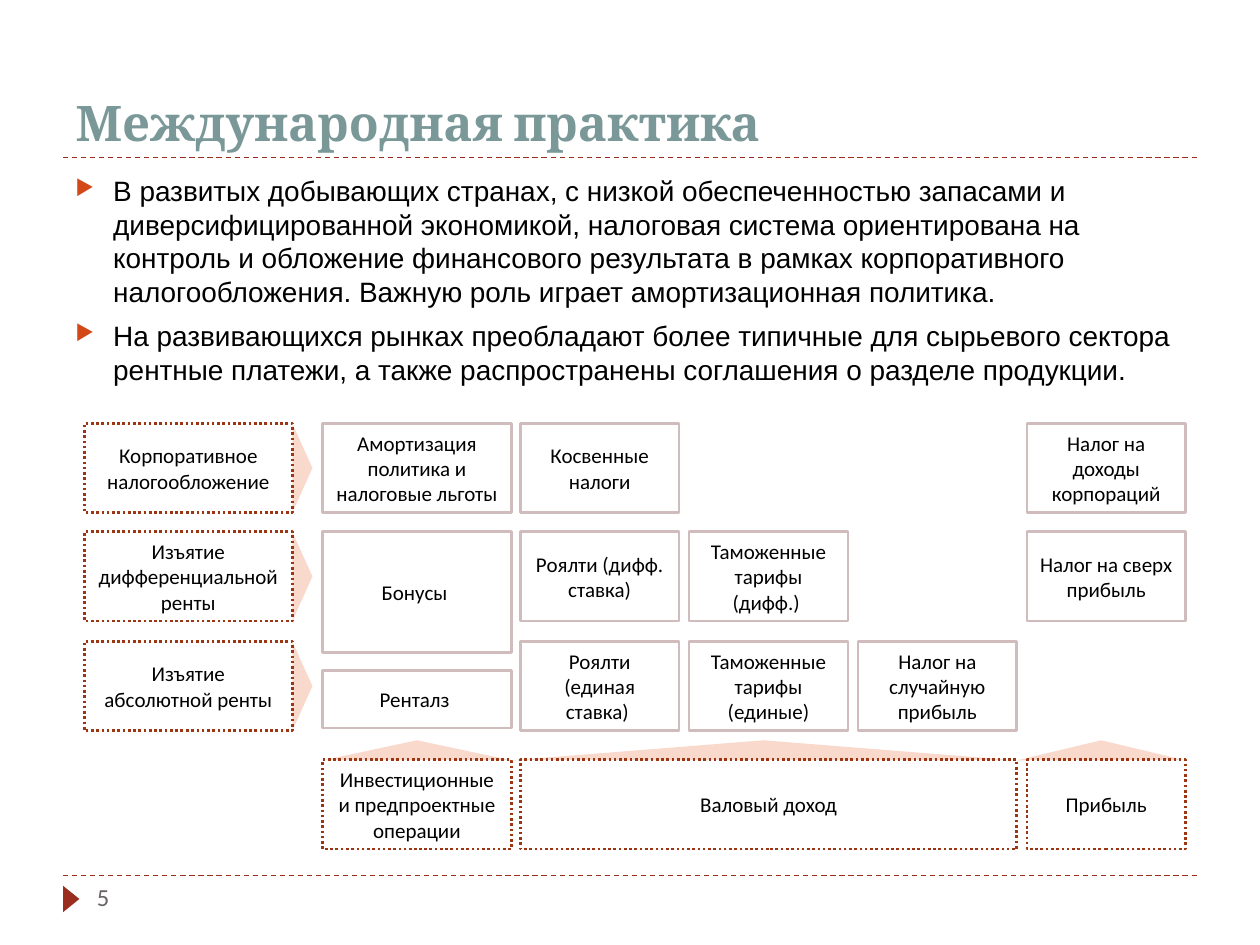
from dataclasses import dataclass

from lxml import etree
from pptx import Presentation
from pptx.dml.color import RGBColor
from pptx.enum.dml import MSO_LINE
from pptx.enum.shapes import MSO_CONNECTOR, MSO_SHAPE
from pptx.enum.text import MSO_ANCHOR, MSO_AUTO_SIZE, PP_ALIGN
from pptx.oxml.ns import qn
from pptx.util import Emu, Pt

RECTANGLE, ARROW = MSO_SHAPE.RECTANGLE, MSO_SHAPE.RIGHT_ARROW
TRIANGLE = MSO_SHAPE.ISOSCELES_TRIANGLE
STRAIGHT = MSO_CONNECTOR.STRAIGHT
DASH, DOTS = MSO_LINE.DASH, MSO_LINE.ROUND_DOT
LEFT, CENTER = PP_ALIGN.LEFT, PP_ALIGN.CENTER
TOP, MIDDLE, BOTTOM = MSO_ANCHOR.TOP, MSO_ANCHOR.MIDDLE, MSO_ANCHOR.BOTTOM

SCALE = 9144  # EMU in one px, 100 px to the inch
COLORS = {
    "title": "7B9899", "rule": "9B2D1F", "bullet": "D34817", "text": "000000",
    "number": "696464", "arrow": "FAD9CD", "heading": "9C3511",
    "tax": "D0BCBC", "white": "FFFFFF",
}

# Grid of the diagram
COLUMNS = [256, 413, 547, 681, 815]
ROWS = [336, 422, 509]
HEADING_LEFT, HEADING_WIDTH = 67, 165
BASE_TOP = 603
FIRST_WIDTH, WIDTH, HEIGHT = 150, 126, 71
ARROW_DEPTH = 16


@dataclass
class Box:
    text: str
    left: int
    top: int
    width: int = WIDTH
    height: int = HEIGHT


ROW_HEADINGS = [
    Box(text, HEADING_LEFT, top, HEADING_WIDTH)
    for text, top in zip(["Корпоративное налогообложение",
                          "Изъятие дифференциальной ренты",
                          "Изъятие абсолютной ренты"], ROWS)
]
BASE_HEADINGS = [
    Box("Инвестиционные и предпроектные операции", COLUMNS[0], BASE_TOP, FIRST_WIDTH),
    Box("Валовый доход", COLUMNS[1], BASE_TOP, COLUMNS[3] + WIDTH - COLUMNS[1]),
    Box("Прибыль", COLUMNS[4], BASE_TOP),
]
BASE_ARROW_LEFTS = [256, 405, 807]
TAXES = [
    Box("Амортизация политика и налоговые льготы", COLUMNS[0], ROWS[0], FIRST_WIDTH),
    Box("Бонусы ", COLUMNS[0], ROWS[1], FIRST_WIDTH, 96),
    Box("Ренталз ", COLUMNS[0], 532, FIRST_WIDTH, 46),
    Box("Косвенные налоги", COLUMNS[1], ROWS[0]),
    Box("Роялти (дифф. ставка)", COLUMNS[1], ROWS[1]),
    Box("Роялти (единая ставка) ", COLUMNS[1], ROWS[2]),
    Box("Таможенные тарифы (дифф.) ", COLUMNS[2], ROWS[1]),
    Box("Таможенные тарифы (единые)", COLUMNS[2], ROWS[2]),
    Box("Налог на случайную прибыль", COLUMNS[3], ROWS[2]),
    Box("Налог на доходы корпораций", COLUMNS[4], ROWS[0]),
    Box("Налог на сверх прибыль", COLUMNS[4], ROWS[1]),
]
POINTS = [
    "В развитых добывающих странах, с низкой обеспеченностью запасами и "
    "диверсифицированной экономикой, налоговая система ориентирована на контроль "
    "и обложение финансового результата в рамках корпоративного налогообложения. "
    "Важную роль играет амортизационная политика.",
    "На развивающихся рынках преобладают более типичные для сырьевого сектора "
    "рентные платежи, а также распространены соглашения о разделе продукции.",
]


def px(length: float) -> Emu:
    return Emu(round(length * SCALE))


def color(name: str) -> RGBColor:
    return RGBColor.from_string(COLORS[name])


def write(shape, text: str, font: str, size: int, ink: str,
          align=LEFT, anchor=TOP, bold: bool = False) -> None:
    frame = shape.text_frame
    frame.text = text
    frame.word_wrap = True
    frame.auto_size = MSO_AUTO_SIZE.NONE
    frame.vertical_anchor = anchor
    for para in frame.paragraphs:
        para.alignment = align
        for span in para.runs:
            span.font.name, span.font.size, span.font.bold = font, Pt(size), bold
            span.font.color.rgb = color(ink)


def add_bullet(para) -> None:
    props = para._p.get_or_add_pPr()
    props.set("marL", str(px(30)))
    props.set("indent", str(px(-30)))
    ink = etree.SubElement(props, qn("a:buClr"))
    etree.SubElement(ink, qn("a:srgbClr"), val=COLORS["bullet"])
    etree.SubElement(props, qn("a:buSzPct"), val="76000")
    etree.SubElement(props, qn("a:buChar"), char="▶")


def add_rule(page, top: int) -> None:
    rule = page.shapes.add_connector(STRAIGHT, px(50), px(top), px(950), px(top))
    rule.line.color.rgb = color("rule")
    rule.line.width = Pt(0.75)
    rule.line.dash_style = DASH
    etree.SubElement(rule._element.spPr, qn("a:effectLst"))


def add_solid(page, kind, left: float, top: float, width: float, height: float,
              fill: str, rotation: int = 0):
    shape = page.shapes.add_shape(kind, px(left), px(top), px(width), px(height))
    shape.shadow.inherit = False
    shape.fill.solid()
    shape.fill.fore_color.rgb = color(fill)
    shape.line.fill.background()
    shape.rotation = rotation
    return shape


def add_arrow(page, left: float, top: float, length: int, rotation: int = 0) -> None:
    arrow = add_solid(page, ARROW, left, top, ARROW_DEPTH, length, "arrow", rotation)
    arrow.adjustments[0] = 1
    arrow.adjustments[1] = 1.27


def add_box(page, box: Box, outline: str, dotted: bool = False) -> None:
    shape = add_solid(page, RECTANGLE, box.left, box.top, box.width, box.height, "white")
    shape.line.color.rgb = color(outline)
    shape.line.width = Pt(1.5)
    if dotted:
        shape.line.dash_style = DOTS
    write(shape, box.text, "Calibri", 12, "text", CENTER, MIDDLE)


def main() -> None:
    deck = Presentation()
    deck.slide_width, deck.slide_height = px(1000), px(750)
    page = deck.slides.add_slide(deck.slide_layouts[5])

    # Rules, corner mark and page number
    add_rule(page, 695)
    add_rule(page, 125)
    add_solid(page, TRIANGLE, 46, 707, 21, 13, "rule", 90)
    number = page.shapes.add_textbox(px(67), px(695), px(217), px(40))
    write(number, "5", "Calibri", 14, "number")

    # Title
    title = page.shapes.title
    title.left, title.top, title.width, title.height = px(50), px(17), px(900), px(108)
    write(title, "Международная практика", "Cambria", 28, "title", LEFT, BOTTOM, True)

    # Bulleted points
    body = page.shapes.add_textbox(px(50), px(133), px(915), px(540))
    write(body, "\n".join(POINTS), "Arial", 16, "text")
    for para in body.text_frame.paragraphs:
        para.space_before = Pt(6)
        add_bullet(para)

    # Row headings point right, base headings point up
    for box in ROW_HEADINGS:
        add_arrow(page, box.left + box.width, box.top, box.height)
        add_box(page, box, "heading", dotted=True)
    for box, left in zip(BASE_HEADINGS, BASE_ARROW_LEFTS):
        length = box.left + box.width - left
        middle = left + length / 2
        add_arrow(page, middle - ARROW_DEPTH / 2,
                  box.top + (1 - ARROW_DEPTH - length) / 2, length, 270)
        add_box(page, box, "heading", dotted=True)

    # Taxes and payments
    for box in TAXES:
        add_box(page, box, "tax")

    deck.save("out.pptx")


if __name__ == "__main__":
    main()
